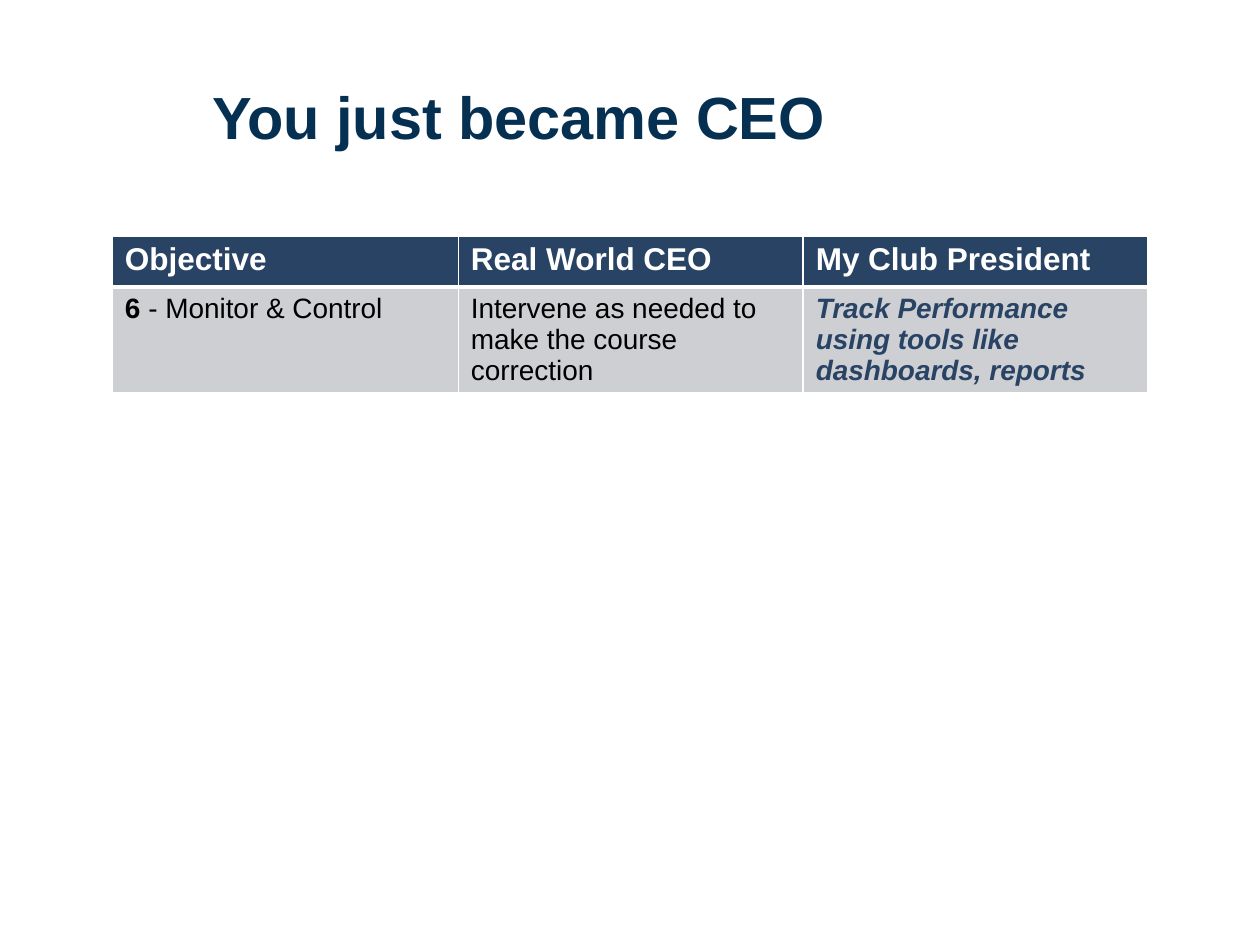
from lxml import etree
from pptx import Presentation
from pptx.dml.color import RGBColor
from pptx.enum.text import MSO_ANCHOR, PP_ALIGN
from pptx.oxml.ns import qn
from pptx.util import Pt

TITLE_BLUE = RGBColor(0x06, 0x30, 0x52)
NAVY = RGBColor(0x29, 0x43, 0x64)
GREY = RGBColor(0xCD, 0xCF, 0xD3)
WHITE = RGBColor(0xFF, 0xFF, 0xFF)
BLACK = RGBColor(0, 0, 0)

HEADINGS = ["Objective", "Real World CEO", "My Club President"]
HEADER_HEIGHT, OBJECTIVE_HEIGHT = 29.2, 60.5


def style_font(font, size, color, bold=None, italic=None):
    font.name = "Arial"
    font.size = Pt(size)
    font.color.rgb = color
    font.bold = bold
    font.italic = italic


def add_title(slide, text):
    title = slide.shapes.title
    title.left, title.top = Pt(114), Pt(41.8)
    title.width, title.height = Pt(588), Pt(48.2)
    frame = title.text_frame
    frame.vertical_anchor = MSO_ANCHOR.MIDDLE
    frame.text = text
    heading = frame.paragraphs[0]
    heading.alignment = PP_ALIGN.LEFT
    style_font(heading.font, 34, TITLE_BLUE, bold=True)


def fill_cell(cell, runs, fill, size, color, bold=False, italic=None):
    """Runs are (text, bold) pairs; a bold of None follows the paragraph."""
    cell.fill.solid()
    cell.fill.fore_color.rgb = fill
    paragraph = cell.text_frame.paragraphs[0]
    style_font(paragraph.font, size, color, bold, italic)
    for text, run_bold in runs:
        run = paragraph.add_run()
        run.text = text
        run.font.bold = run_bold


def rule_cell(cell, side, width):
    """Draw a white rule on one side: lnT or lnB."""
    line = etree.Element(qn(f"a:{side}"), w=str(Pt(width)))
    fill = etree.SubElement(line, qn("a:solidFill"))
    etree.SubElement(fill, qn("a:srgbClr"), val=str(WHITE))
    cell._tc.get_or_add_tcPr().insert(0, line)


def add_objective_table(slide):
    # The default table style supplies the thin white rules between cells
    table = slide.shapes.add_table(
        2, len(HEADINGS), Pt(64.2), Pt(134.9), Pt(591.9),
        Pt(HEADER_HEIGHT + OBJECTIVE_HEIGHT)).table
    table.rows[0].height = Pt(HEADER_HEIGHT)
    table.rows[1].height = Pt(OBJECTIVE_HEIGHT)
    for column, width in zip(table.columns, (197.7, 197.1, 197.1)):
        column.width = Pt(width)

    # Header row with a thick rule below
    for column, heading in enumerate(HEADINGS):
        header = table.cell(0, column)
        fill_cell(header, [(heading, None)], NAVY, 18, WHITE, bold=True)
        rule_cell(header, "lnB", 3)
        rule_cell(table.cell(1, column), "lnT", 3)

    # Objective row
    objective, ceo, president = table.rows[1].cells
    fill_cell(objective, [("6 ", True), ("- Monitor & Control", None)], GREY, 16, BLACK)
    fill_cell(ceo, [("Intervene as needed to make the course correction", None)],
              GREY, 16, BLACK)
    fill_cell(president, [("Track Performance using tools like dashboards, reports", None)],
              GREY, 16, NAVY, bold=True, italic=True)


def main():
    deck = Presentation()
    deck.slide_width, deck.slide_height = Pt(720), Pt(540)
    slide = deck.slides.add_slide(deck.slide_layouts[5])
    add_title(slide, "You just became CEO")
    add_objective_table(slide)
    deck.save("out.pptx")


if __name__ == "__main__":
    main()
